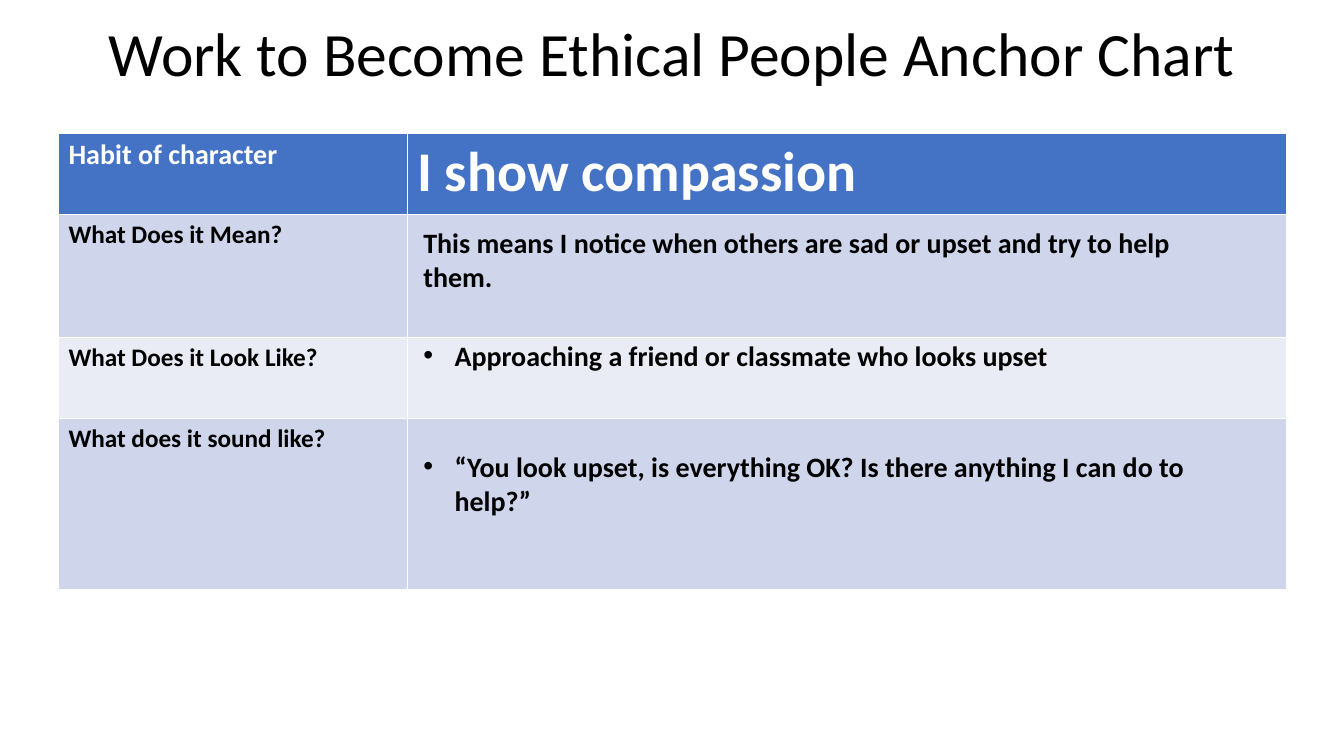
"""Build the anchor chart slide about showing compassion."""
from lxml import etree
from pptx import Presentation
from pptx.dml.color import RGBColor
from pptx.enum.text import MSO_ANCHOR as Anchor, MSO_AUTO_SIZE as AutoSize, PP_ALIGN as Align
from pptx.oxml.ns import qn
from pptx.util import Inches, Pt

FONT = "Calibri"
BLACK = RGBColor(0x00, 0x00, 0x00)
WHITE = RGBColor(0xFF, 0xFF, 0xFF)
HEADER_BLUE = RGBColor(0x44, 0x72, 0xC4)
BAND_DARK = RGBColor(0xCF, 0xD5, 0xEA)
BAND_LIGHT = RGBColor(0xE9, 0xEB, 0xF5)

TITLE = "Work to Become Ethical People Anchor Chart"
HABIT = "I show compassion"
QUESTIONS = ["What Does it Mean?", "What Does it Look Like?", "What does it sound like?"]
COLUMN_WIDTHS = [3.46, 8.72]
ROW_HEIGHTS = [0.81, 1.22, 0.8, 1.7]
ANSWERS = [
    (2.19, 8.28, 0.77, False,
     "This means I notice when others are sad or upset and try to help them."),
    (3.31, 8.35, 0.44, True, "Approaching a friend or classmate who looks upset"),
    (4.41, 8.35, 0.77, True,
     "“You look upset, is everything OK? Is there anything I can do to help?”"),
]


def style_font(para, size, color, bold=True):
    font = para.font
    font.name, font.size, font.bold = FONT, Pt(size), bold
    font.color.rgb = color


def add_bullet(para):
    properties = para._p.get_or_add_pPr()
    properties.set("marL", str(Inches(0.31)))
    properties.set("indent", str(-Inches(0.31)))
    bullet_font = etree.Element(qn("a:buFont"), typeface="Arial")
    bullet = etree.Element(qn("a:buChar"), char="•")
    properties.insert(0, bullet_font)
    properties.insert(1, bullet)


def set_title(page):
    title = page.shapes.title
    title.left, title.top = Inches(0.92), Inches(0.08)
    title.width, title.height = Inches(11.5), Inches(0.96)
    frame = title.text_frame
    frame.text = TITLE
    frame.auto_size = AutoSize.NONE
    frame.vertical_anchor = Anchor.MIDDLE
    para = frame.paragraphs[0]
    para.alignment = Align.CENTER
    para.line_spacing = 0.9
    style_font(para, 44, BLACK, bold=False)


def fill_cell(cell, fill, text="", size=18, color=BLACK):
    cell.fill.solid()
    cell.fill.fore_color.rgb = fill
    if text:
        cell.text = text
        style_font(cell.text_frame.paragraphs[0], size, color)


def add_habit_table(page):
    table = page.shapes.add_table(
        len(ROW_HEIGHTS), len(COLUMN_WIDTHS), Inches(0.58), Inches(1.32),
        Inches(sum(COLUMN_WIDTHS)), Inches(sum(ROW_HEIGHTS))).table
    for column, width in zip(table.columns, COLUMN_WIDTHS):
        column.width = Inches(width)
    for row, height in zip(table.rows, ROW_HEIGHTS):
        row.height = Inches(height)
    fill_cell(table.cell(0, 0), HEADER_BLUE, "Habit of character", 20, WHITE)
    fill_cell(table.cell(0, 1), HEADER_BLUE, HABIT, 40, WHITE)
    for index, question in enumerate(QUESTIONS, start=1):
        band = BAND_DARK if index % 2 else BAND_LIGHT
        fill_cell(table.cell(index, 0), band, question)
        fill_cell(table.cell(index, 1), band)


def add_answer(page, top, width, height, bulleted, text):
    box = page.shapes.add_textbox(Inches(4.1), Inches(top), Inches(width), Inches(height))
    frame = box.text_frame
    frame.word_wrap = True
    frame.auto_size = AutoSize.SHAPE_TO_FIT_TEXT
    frame.text = text
    para = frame.paragraphs[0]
    style_font(para, 20, BLACK)
    if bulleted:
        add_bullet(para)


def main():
    deck = Presentation()
    deck.slide_width, deck.slide_height = Inches(13.33), Inches(7.5)
    page = deck.slides.add_slide(deck.slide_layouts[5])
    set_title(page)
    add_habit_table(page)
    for answer in ANSWERS:
        add_answer(page, *answer)
    deck.save("out.pptx")


if __name__ == "__main__":
    main()
